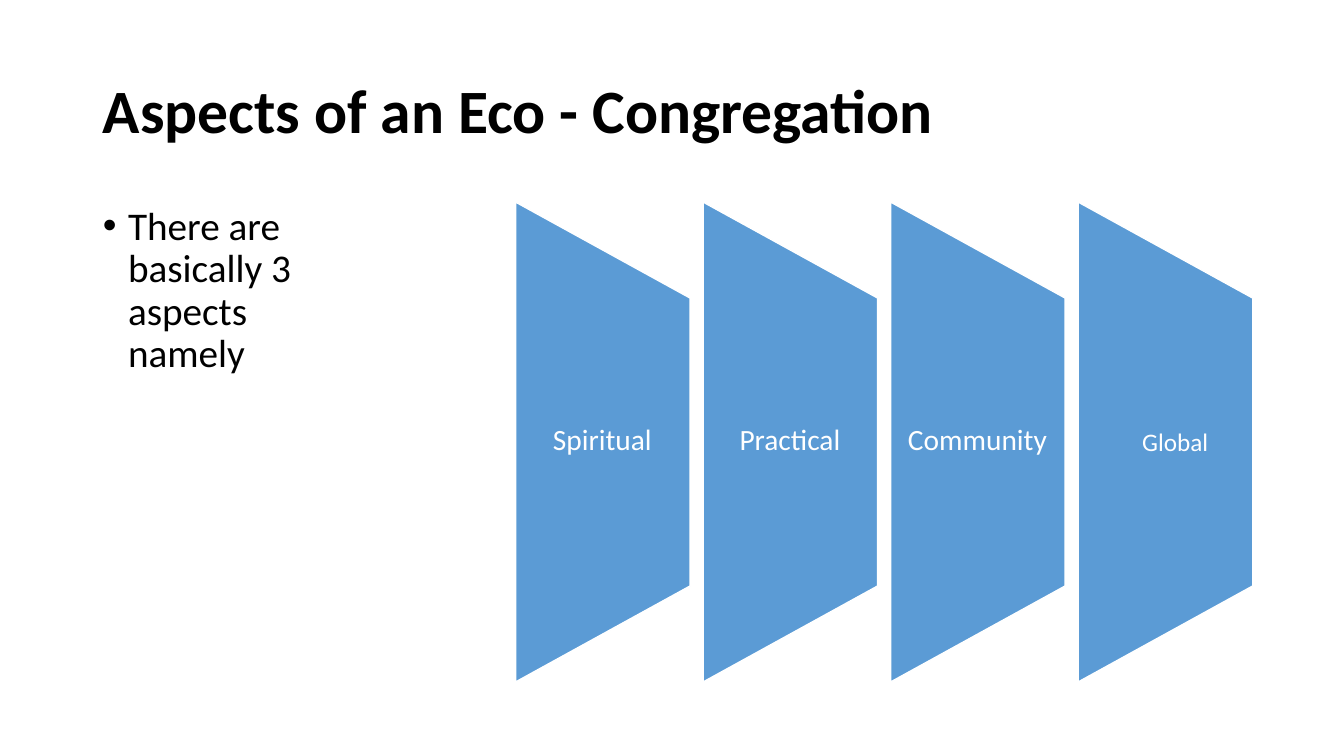
from pptx import Presentation
from pptx.dml.color import RGBColor
from pptx.enum.shapes import MSO_SHAPE as Preset
from pptx.enum.text import MSO_ANCHOR as Anchor, MSO_AUTO_SIZE as AutoSize, PP_ALIGN as Align
from pptx.util import Pt

PX = 9144
COLORS = {"text": "000000", "panel": "5B9BD5", "light": "FFFFFF"}
ASPECTS = ["Spiritual", "Practical", "Community"]
PANEL_COUNT = 4
PANEL_LEFT, PANEL_TOP, PANEL_WIDTH, PANEL_HEIGHT = 511, 200, 173, 476
PANEL_STEP = 186
LABEL_TOP, LABEL_HEIGHT = 295, 286
LABEL_INSET = 15


def color(name):
    return RGBColor.from_string(COLORS[name])


def apply(target, values):
    for name, value in values.items():
        setattr(target, name, value)


def place(shape, left, top, width, height):
    names = ("left", "top", "width", "height")
    apply(shape, {name: px * PX for name, px in zip(names, (left, top, width, height))})


def write(shape, text, size, ink, frame_format, paragraph_format, bold=False):
    frame = shape.text_frame
    frame.text = text
    apply(frame, {"word_wrap": True, "auto_size": AutoSize.NONE} | frame_format)
    paragraph = frame.paragraphs[0]
    apply(paragraph, paragraph_format)
    font = paragraph.runs[0].font
    apply(font, {"name": "Calibri", "size": Pt(size), "bold": bold})
    font.color.rgb = color(ink)


def add_title(slide, text):
    title = slide.shapes.title
    place(title, 92, 40, 1150, 145)
    write(title, text, 44, "text", {"vertical_anchor": Anchor.MIDDLE},
          {"alignment": Align.LEFT, "line_spacing": 0.9}, bold=True)


def add_body(slide, text):
    body = slide.placeholders[1]
    place(body, 92, 200, 227, 476)
    write(body, text, 28, "text", {"vertical_anchor": Anchor.TOP},
          {"line_spacing": 0.9, "space_before": Pt(10)})
    properties = body.text_frame.paragraphs[0]._p.get_or_add_pPr()
    properties.set("marL", str(25 * PX))
    properties.set("indent", str(-25 * PX))


def add_panel(shapes, left):
    panel = shapes.add_shape(Preset.FLOWCHART_MANUAL_OPERATION, 0, 0, 0, 0)
    shift = (PANEL_HEIGHT - PANEL_WIDTH) / 2
    place(panel, round(left - shift), round(PANEL_TOP + shift), PANEL_HEIGHT, PANEL_WIDTH)
    panel.rotation = 270
    panel.shadow.inherit = False
    panel.fill.solid()
    panel.fill.fore_color.rgb = color("panel")
    panel.line.color.rgb = color("light")
    panel.line.width = Pt(1)


def add_label(shapes, box, text, size, frame_format, paragraph_format):
    label = shapes.add_textbox(0, 0, 0, 0)
    place(label, *box)
    write(label, text, size, "light", frame_format, paragraph_format)


def add_aspects(slide):
    group = slide.shapes.add_group_shape()
    lefts = [PANEL_LEFT + index * PANEL_STEP for index in range(PANEL_COUNT)]
    for left in lefts:
        add_panel(group.shapes, left)
    frame_format = {
        "vertical_anchor": Anchor.MIDDLE,
        "margin_left": LABEL_INSET * PX,
        "margin_right": LABEL_INSET * PX,
        "margin_top": 0,
        "margin_bottom": 0,
    }
    paragraph_format = {"alignment": Align.CENTER, "line_spacing": 0.9, "space_after": Pt(7)}
    for left, text in zip(lefts, ASPECTS):
        add_label(group.shapes, (left, LABEL_TOP, PANEL_WIDTH, LABEL_HEIGHT), text, 21,
                  frame_format, paragraph_format)


def main():
    presentation = Presentation()
    apply(presentation, {"slide_width": 1333 * PX, "slide_height": 750 * PX})
    slide = presentation.slides.add_slide(presentation.slide_layouts[1])
    add_title(slide, "Aspects of an Eco - Congregation")
    add_body(slide, "There are basically 3 aspects namely")
    add_aspects(slide)
    add_label(slide.shapes, (1123, 418, 119, 40), "Global", 18,
              {"auto_size": AutoSize.SHAPE_TO_FIT_TEXT}, {"alignment": Align.LEFT})
    presentation.save("out.pptx")


if __name__ == "__main__":
    main()
